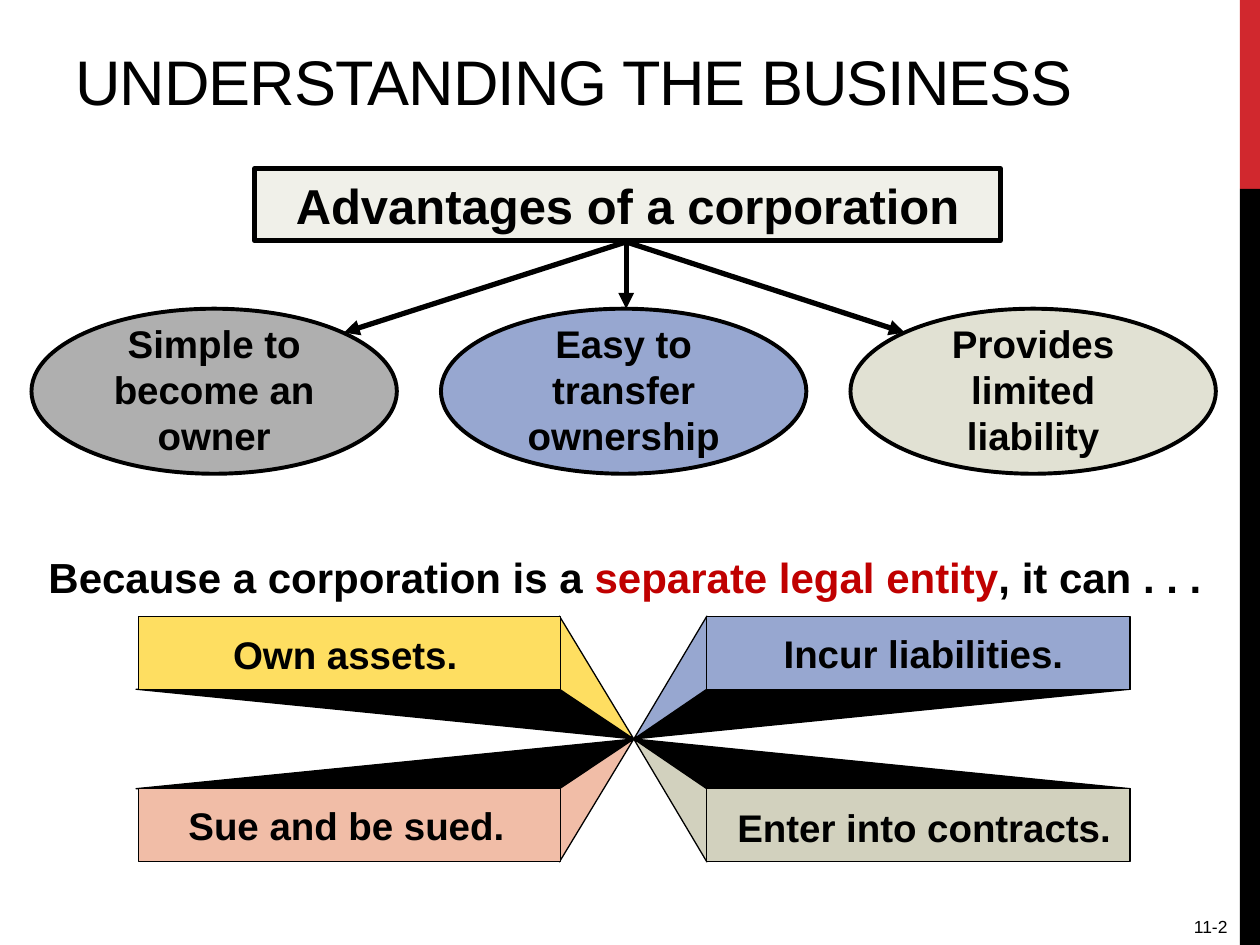
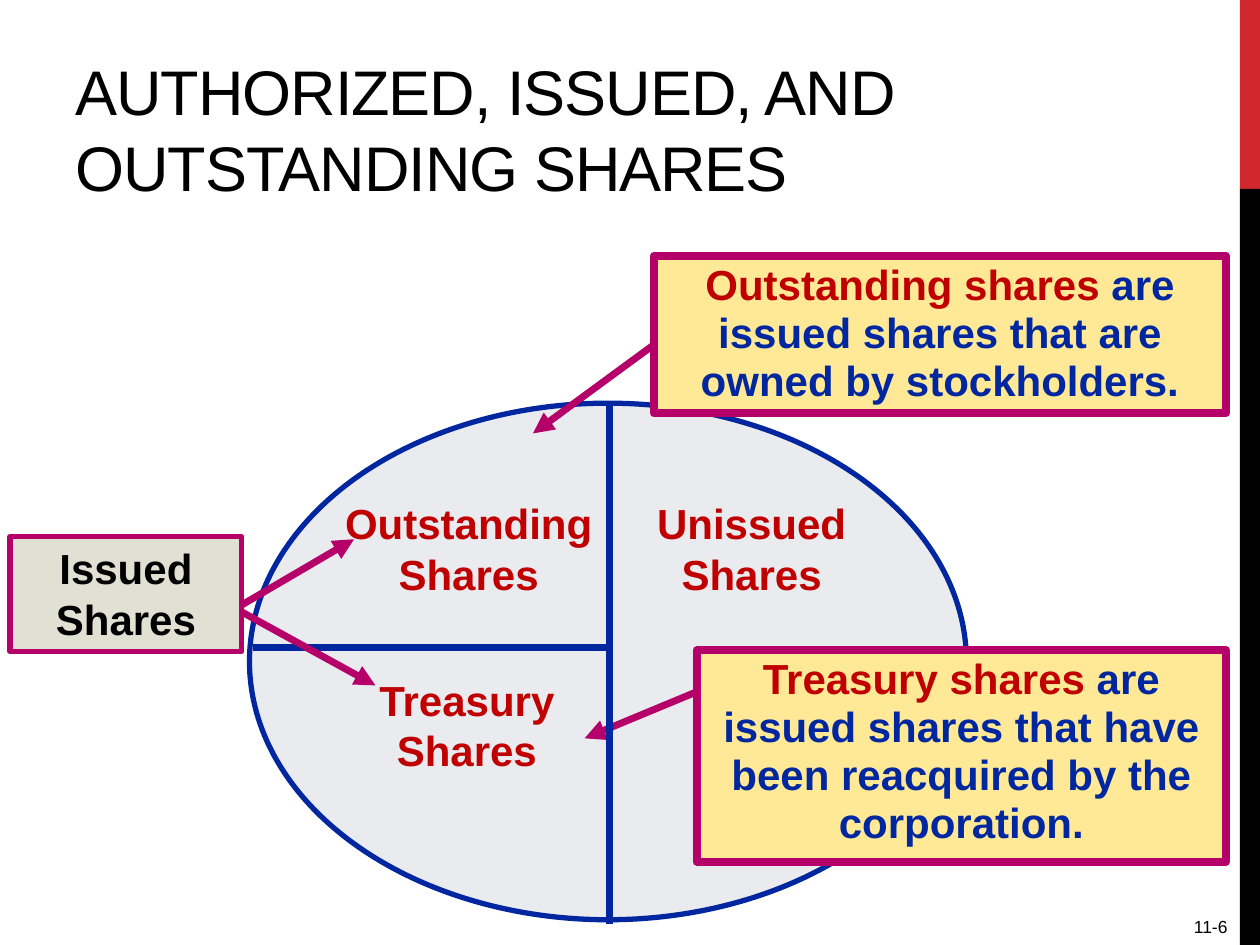
import dataclasses
import typing

import lxml.etree
import pptx
import pptx.dml.color
import pptx.enum.shapes
import pptx.enum.text
import pptx.oxml.ns
import pptx.util

COLORS = {
    "black": "000000", "red": "C00000", "band": "D1282E", "gray": "AFAFAF",
    "blue": "97A7D0", "sand": "E1E1D3", "stone": "D2D1BE", "pale": "F0F0E9",
    "peach": "F1BDA7", "yellow": "FEDE61", "cream": "FFE996",
    "mist": "EAEBEE", "navy": "00279F", "magenta": "B50069",
}
FONT = "Arial"
COLS, ROWS = 100, 75
WIDTH, HEIGHT = pptx.util.Inches(10), pptx.util.Inches(7.5)
RECT = pptx.enum.shapes.MSO_SHAPE.RECTANGLE
OVAL = pptx.enum.shapes.MSO_SHAPE.OVAL
ALIGN = pptx.enum.text.PP_ALIGN
ANCHOR = pptx.enum.text.MSO_ANCHOR

Point = tuple[float, float]
Runs = list[tuple[str, str]]


class Box(typing.NamedTuple):
    left: float
    top: float
    width: float
    height: float


@dataclasses.dataclass
class Advantage:
    text: str
    fill: str
    arrow_start: Point
    arrow_end: Point


@dataclasses.dataclass
class Power:
    text: str
    fill: str
    on_left: bool
    on_top: bool
    label: Box


@dataclasses.dataclass
class Callout:
    runs: Runs
    box: Box
    arrow_start: Point
    arrow_end: Point


@dataclasses.dataclass
class Sector:
    text: str
    box: Box


def col(n: float) -> int:
    return round(WIDTH * n / COLS)


def row(n: float) -> int:
    return round(HEIGHT * n / ROWS)


def place(box: Box) -> tuple[int, int, int, int]:
    return col(box.left), row(box.top), col(box.width), row(box.height)


def rgb(name: str) -> pptx.dml.color.RGBColor:
    return pptx.dml.color.RGBColor.from_string(COLORS[name])


def paint(sp, fill: str, line: str | None = None, weight: float = 0) -> None:
    sp.shadow.inherit = False
    sp.fill.solid()
    sp.fill.fore_color.rgb = rgb(fill)
    if line is None:
        sp.line.fill.background()
    else:
        sp.line.color.rgb = rgb(line)
        sp.line.width = pptx.util.Pt(weight)


def add_figure(slide, kind, box: Box, fill: str, line: str | None = None, weight: float = 0):
    sp = slide.shapes.add_shape(kind, *place(box))
    paint(sp, fill, line, weight)
    return sp


def add_triangle(slide, points: list[Point], fill: str) -> None:
    first, *rest = [(col(x), row(y)) for x, y in points]
    builder = slide.shapes.build_freeform(*first)
    builder.add_line_segments(rest, close=True)
    paint(builder.convert_to_shape(), fill, "black")


def add_line(slide, start: Point, end: Point, color: str, weight: float, arrow: bool = True) -> None:
    line = slide.shapes.add_connector(
        pptx.enum.shapes.MSO_CONNECTOR.STRAIGHT,
        col(start[0]), row(start[1]), col(end[0]), row(end[1]))
    line.line.color.rgb = rgb(color)
    line.line.width = pptx.util.Pt(weight)
    sp_pr = line._element.spPr
    if arrow:
        ln = sp_pr.find(pptx.oxml.ns.qn("a:ln"))
        lxml.etree.SubElement(ln, pptx.oxml.ns.qn("a:tailEnd"), type="triangle")
    lxml.etree.SubElement(sp_pr, pptx.oxml.ns.qn("a:effectLst"))


def write(sp, text: str | Runs, *, size: float = 24, color: str = "black", bold: bool = True,
          align=ALIGN.CENTER, anchor=ANCHOR.TOP, leading: float | None = None,
          tracking: int | None = None, grow: bool = True) -> None:
    tf = sp.text_frame
    tf.word_wrap = True
    tf.vertical_anchor = anchor
    if grow:
        tf.auto_size = pptx.enum.text.MSO_AUTO_SIZE.SHAPE_TO_FIT_TEXT
    p = tf.paragraphs[0]
    for words, ink in [(text, color)] if isinstance(text, str) else text:
        for i, part in enumerate(words.split("\n")):
            if i:
                p = tf.add_paragraph()
            r = p.add_run()
            r.text = part
            r.font.name = FONT
            r.font.size = pptx.util.Pt(size)
            r.font.bold = bold
            r.font.color.rgb = rgb(ink)
            if tracking is not None:
                r._r.get_or_add_rPr().set("spc", str(tracking))
    for p in tf.paragraphs:
        p.alignment = align
        if leading is not None:
            p.line_spacing = leading


def add_text(slide, box: Box, text: str | Runs, **style) -> None:
    write(slide.shapes.add_textbox(*place(box)), text, **style)


def add_page(prs, title: str, title_box: Box, number: str):
    slide = prs.slides.add_slide(prs.slide_layouts[6])
    add_figure(slide, RECT, Box(98.4, 0, 1.6, 15), "band")
    add_figure(slide, RECT, Box(98.4, 15, 1.6, 60), "black")
    add_text(slide, title_box, title, size=36, bold=False, align=ALIGN.LEFT,
             anchor=ANCHOR.BOTTOM, tracking=-60, grow=False)
    add_text(slide, Box(89.2, 72.2, 9.2, 2.8), number, size=10, bold=False, align=ALIGN.RIGHT)
    return slide


ADVANTAGES = [
    Advantage("Simple to become an owner", "gray", (49.7, 19.2), (27.3, 26.4)),
    Advantage("Easy to transfer ownership", "blue", (49.7, 16.7), (49.7, 24.5)),
    Advantage("Provides limited\nliability", "sand", (49.7, 19.2), (71.8, 26.4)),
]
POWERS = [
    Power("Sue and be sued.", "peach", True, False, Box(13.3, 63.6, 28.4, 4.3)),
    Power("Enter into contracts.", "stone", False, False, Box(56.7, 63.7, 33.3, 4.3)),
    Power("Own assets.", "yellow", True, True, Box(13.2, 50, 28.4, 4.3)),
    Power("Incur liabilities.", "blue", False, True, Box(59.1, 49.9, 28.4, 4.3)),
]
HUB = (50.3, 58.65)
SECTORS = [
    Sector("Unissued\nShares", Box(49.2, 39, 20.9, 9.1)),
    Sector("Treasury\nShares", Box(26.6, 53, 20.9, 9.1)),
    Sector("Outstanding\nShares", Box(23.4, 39, 27.6, 9.1)),
]
CALLOUTS = [
    Callout([("Treasury shares ", "red"),
             ("are issued shares that have been reacquired by the corporation.", "navy")],
            Box(55.3, 51.6, 42, 16.8), (57, 54.2), (46.4, 58.6)),
    Callout([("Outstanding shares ", "red"),
             ("are issued shares that are owned by stockholders.", "navy")],
            Box(51.9, 20.3, 45.4, 12.5), (52.8, 26.7), (42.3, 34.4)),
]


def add_power(slide, power: Power) -> None:
    left, width = (11, 33.5) if power.on_left else (56.1, 33.6)
    top, height = (48.9, 5.8) if power.on_top else (62.6, 5.8)
    inner, outer = (44.4, 10.8) if power.on_left else (56.1, 89.7)
    near, far = (top + height, top) if power.on_top else (top, top + height)
    add_triangle(slide, [HUB, (outer, near), (inner, near)], "black")
    add_triangle(slide, [(inner, near), HUB, (inner, far)], power.fill)
    add_figure(slide, RECT, Box(left, top, width, height), power.fill, "black")
    add_text(slide, power.label, power.text, size=22, leading=0.9)


def build_business(prs) -> None:
    slide = add_page(prs, "UNDERSTANDING THE BUSINESS", Box(5, -0.1, 91.7, 10), "11-2")
    for i, adv in enumerate(ADVANTAGES):
        left = 2.5 + 32.5 * i
        add_figure(slide, OVAL, Box(left, 24.5, 29, 13.1), adv.fill, "black", 2.25)
        add_text(slide, Box(left + 2.8, 24.9, 23.4, 12.1), adv.text, size=22)
        add_line(slide, adv.arrow_start, adv.arrow_end, "black", 3)
    heading = add_figure(slide, RECT, Box(20.2, 13.4, 59.2, 5.7), "pale", "black", 3)
    write(heading, "Advantages of a corporation", size=28)
    add_text(slide, Box(2.5, 43.3, 94.2, 5),
             [("Because a corporation is a ", "black"), ("separate legal entity", "red"),
              (", it can . . .", "black")])
    for power in POWERS:
        add_power(slide, power)


def build_shares(prs) -> None:
    slide = add_page(prs, "AUTHORIZED, ISSUED, AND OUTSTANDING SHARES",
                     Box(5, 1.7, 91.7, 15), "11-6")
    add_figure(slide, OVAL, Box(19.8, 32, 56.9, 41), "mist", "navy", 3)
    for sector in SECTORS:
        add_text(slide, sector.box, sector.text, color="red")
    add_line(slide, (20.1, 51.4), (48.4, 51.4), "navy", 4, arrow=False)
    for end in [(28.1, 42.8), (29.8, 54.4)]:
        add_line(slide, (18.7, 48.3), end, "magenta", 4)
    issued = add_figure(slide, RECT, Box(0.8, 42.6, 18.4, 9.1), "sand", "magenta", 3)
    write(issued, "Issued\nShares")
    for callout in CALLOUTS:
        add_line(slide, callout.arrow_start, callout.arrow_end, "magenta", 4)
        sp = add_figure(slide, RECT, callout.box, "cream", "magenta", 4.5)
        write(sp, callout.runs, leading=0.95)
    add_line(slide, (48.4, 32.2), (48.4, 73.3), "navy", 4, arrow=False)


def main() -> None:
    prs = pptx.Presentation()
    prs.slide_width, prs.slide_height = WIDTH, HEIGHT
    build_business(prs)
    build_shares(prs)
    prs.save("out.pptx")


if __name__ == "__main__":
    main()
